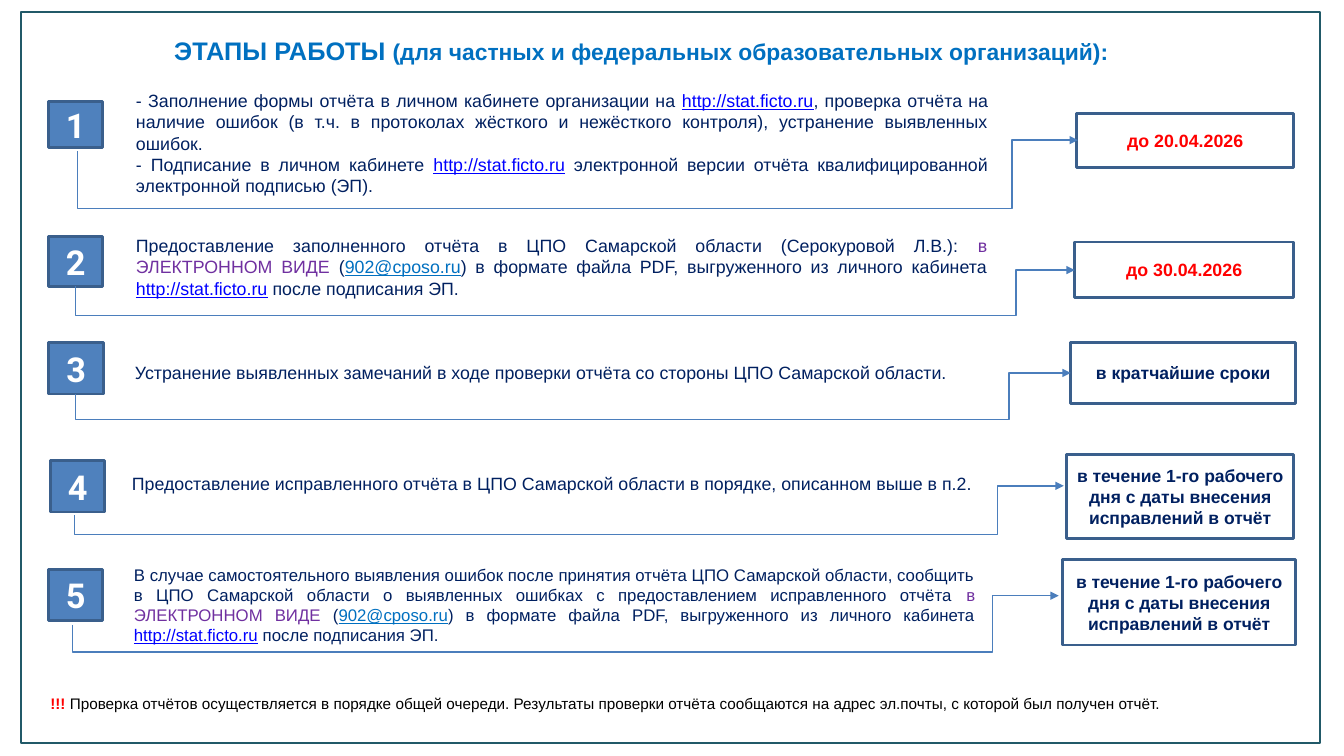
from lxml import etree
from pptx import Presentation
from pptx.dml.color import RGBColor
from pptx.enum import shapes, text
from pptx.oxml import ns
from pptx.util import Inches, Pt

NAVY, RED, BLUE, LINK, PURPLE = "002060", "FF0000", "0070C0", "0000FF", "7030A0"
FILL, EDGE, WIRE, FRAME, WHITE = "4F81BD", "3A5F8C", "4B7EBC", "215968", "FFFFFF"

SITE = ("http://stat.ficto.ru", LINK)
BY_EMAIL = [
    ("в ЭЛЕКТРОННОМ ВИДЕ ", PURPLE),
    ("(", NAVY),
    ("902@cposo.ru", BLUE),
    (") в формате файла PDF, выгруженного из личного кабинета ", NAVY),
    SITE,
    (" после подписания ЭП.", NAVY),
]
ONE_DAY = "в течение 1-го рабочего дня с даты внесения исправлений в отчёт"

STEPS = [
    {
        "badge": (0.48, 1.01, 0.54, 0.45),
        "body": (1.25, 0.84, 8.65, 1.17),
        "size": 12.7,
        "paragraphs": [
            [("- Заполнение формы отчёта в личном кабинете организации на ", NAVY), SITE,
             (", проверка отчёта на наличие ошибок (в т.ч. в протоколах жёсткого и нежёсткого "
              "контроля), устранение выявленных ошибок.", NAVY)],
            [("- Подписание в личном кабинете ", NAVY), SITE,
             (" электронной версии отчёта квалифицированной электронной подписью (ЭП).", NAVY)],
        ],
        "deadline": ("до 20.04.2026", (10.68, 1.13, 2.15, 0.53), 12.7, RED),
        "route": ((0.77, 1.5), (10.04, 2.07), (10.69, 1.39)),
    },
    {
        "badge": (0.48, 2.35, 0.54, 0.49),
        "body": (1.25, 2.28, 8.64, 0.74),
        "size": 12.7,
        "paragraphs": [
            [("Предоставление заполненного отчёта в ЦПО Самарской области "
              "(Серокуровой Л.В.): ", NAVY), *BY_EMAIL],
        ],
        "deadline": ("до 30.04.2026", (10.66, 2.4, 2.17, 0.55), 12.7, RED),
        "route": ((0.75, 2.84), (10.08, 3.13), (10.66, 2.68)),
    },
    {
        "badge": (0.48, 3.4, 0.55, 0.51),
        "body": (1.24, 3.54, 8.67, 0.31),
        "size": 12.7,
        "paragraphs": [
            [("Устранение выявленных замечаний в ходе проверки отчёта со стороны "
              "ЦПО Самарской области.", NAVY)],
        ],
        "deadline": ("в кратчайшие сроки", (10.62, 3.4, 2.23, 0.6), 12.5, NAVY),
        "route": ((0.75, 3.91), (10.01, 4.16), (10.62, 3.7)),
    },
    {
        "badge": (0.5, 4.57, 0.54, 0.51),
        "body": (1.21, 4.64, 8.57, 0.53),
        "size": 12.7,
        "paragraphs": [
            [("Предоставление исправленного отчёта в ЦПО Самарской области в порядке, "
              "описанном выше в п.2.", NAVY)],
        ],
        "deadline": (ONE_DAY, (10.58, 4.51, 2.25, 0.83), 12.5, NAVY),
        "route": ((0.74, 5.11), (9.89, 5.3), (10.55, 4.82)),
    },
    {
        "badge": (0.48, 5.65, 0.54, 0.51),
        "body": (1.23, 5.55, 8.54, 1.12),
        "size": 12,
        "paragraphs": [
            [("В случае самостоятельного выявления ошибок после принятия отчёта ЦПО Самарской "
              "области, сообщить в ЦПО Самарской области о выявленных ошибках с предоставлением "
              "исправленного отчёта ", NAVY), *BY_EMAIL],
        ],
        "deadline": (ONE_DAY, (10.54, 5.55, 2.31, 0.85), 12.5, NAVY),
        "route": ((0.72, 6.2), (9.84, 6.47), (10.5, 5.91)),
    },
]


def color(value):
    return RGBColor.from_string(value)


def style(span, size, hue, bold=False, face="Arial"):
    span.font.name = face
    span.font.size = Pt(size)
    span.font.bold = bold
    span.font.color.rgb = color(hue)


def add_text(page, place, paragraphs, align):
    box = page.shapes.add_textbox(*map(Inches, place))
    frame = box.text_frame
    frame.word_wrap = True
    for index, spans in enumerate(paragraphs):
        para = frame.add_paragraph() if index else frame.paragraphs[0]
        para.alignment = align
        for words, size, hue, bold in spans:
            span = para.add_run()
            span.text = words
            style(span, size, hue, bold)
            span.font.underline = words == SITE[0] or "@" in words
    return box


def add_box(page, place, edge, width, fill=None):
    box = page.shapes.add_shape(shapes.MSO_SHAPE.RECTANGLE, *map(Inches, place))
    box.shadow.inherit = False
    if fill:
        box.fill.solid()
        box.fill.fore_color.rgb = color(fill)
    else:
        box.fill.background()
    box.line.color.rgb = color(edge)
    box.line.width = Pt(width)
    return box


def add_label(page, place, words, size, hue, face="Arial", fill=None):
    box = add_box(page, place, EDGE, 2, fill)
    frame = box.text_frame
    frame.word_wrap = True
    frame.margin_left = frame.margin_right = Inches(0.05)
    frame.vertical_anchor = text.MSO_ANCHOR.MIDDLE
    frame.text = words
    para = frame.paragraphs[0]
    para.alignment = text.PP_ALIGN.CENTER
    style(para.runs[0], size, hue, True, face)


def add_route(page, start, corner, end):
    run, rise = end[0] - start[0], start[1] - end[1]
    middle_x, middle_y = (start[0] + end[0]) / 2, (start[1] + end[1]) / 2
    left, top = middle_x - rise / 2, middle_y - run / 2
    wire = page.shapes.add_connector(
        shapes.MSO_CONNECTOR.ELBOW,
        *map(Inches, (left, top, left + rise, top + run)))
    wire.line.color.rgb = color(WIRE)
    wire.line.width = Pt(1)
    properties = wire.element.spPr
    transform = properties.find(ns.qn("a:xfrm"))
    for name, value in (("rot", "5400000"), ("flipH", "1"), ("flipV", "1")):
        transform.set(name, value)
    geometry = properties.find(ns.qn("a:prstGeom"))
    geometry.set("prst", "bentConnector4")
    guides = geometry.find(ns.qn("a:avLst"))
    bends = ((start[1] - corner[1]) / rise, (corner[0] - start[0]) / run)
    for number, bend in enumerate(bends, 1):
        etree.SubElement(guides, ns.qn("a:gd"), name=f"adj{number}",
                         fmla=f"val {round(bend * 100000)}")
    outline = properties.find(ns.qn("a:ln"))
    etree.SubElement(outline, ns.qn("a:tailEnd"), type="triangle")
    etree.SubElement(properties, ns.qn("a:effectLst"))


def add_step(page, number, step):
    add_label(page, step["badge"], str(number), 24.5, WHITE, "Roboto", FILL)
    paragraphs = [[(words, step["size"], hue, False) for words, hue in spans]
                  for spans in step["paragraphs"]]
    add_text(page, step["body"], paragraphs, text.PP_ALIGN.JUSTIFY)
    words, place, size, hue = step["deadline"]
    add_label(page, place, words, size, hue)
    add_route(page, *step["route"])


def main():
    deck = Presentation()
    deck.slide_width, deck.slide_height = Inches(13.33), Inches(7.5)
    page = deck.slides.add_slide(deck.slide_layouts[6])
    add_box(page, (0.21, 0.12, 12.88, 7.25), FRAME, 1.5)
    add_text(page, (1.63, 0.3, 10.13, 0.41), [[
        ("ЭТАПЫ РАБОТЫ ", 18.1, BLUE, True),
        ("(для частных и федеральных образовательных организаций):", 16.3, BLUE, True),
    ]], text.PP_ALIGN.LEFT)
    for number, step in enumerate(STEPS, 1):
        add_step(page, number, step)
    note = add_text(page, (0.4, 6.86, 12.51, 0.27), [[
        ("!!! ", 10.9, RED, True),
        ("Проверка отчётов осуществляется в порядке общей очереди. Результаты проверки отчёта "
         "сообщаются на адрес эл.почты, с которой был получен отчёт.", 10.9, "000000", False),
    ]], text.PP_ALIGN.JUSTIFY)
    note.text_frame.paragraphs[0].line_spacing = 0.9
    deck.save("out.pptx")


if __name__ == "__main__":
    main()
